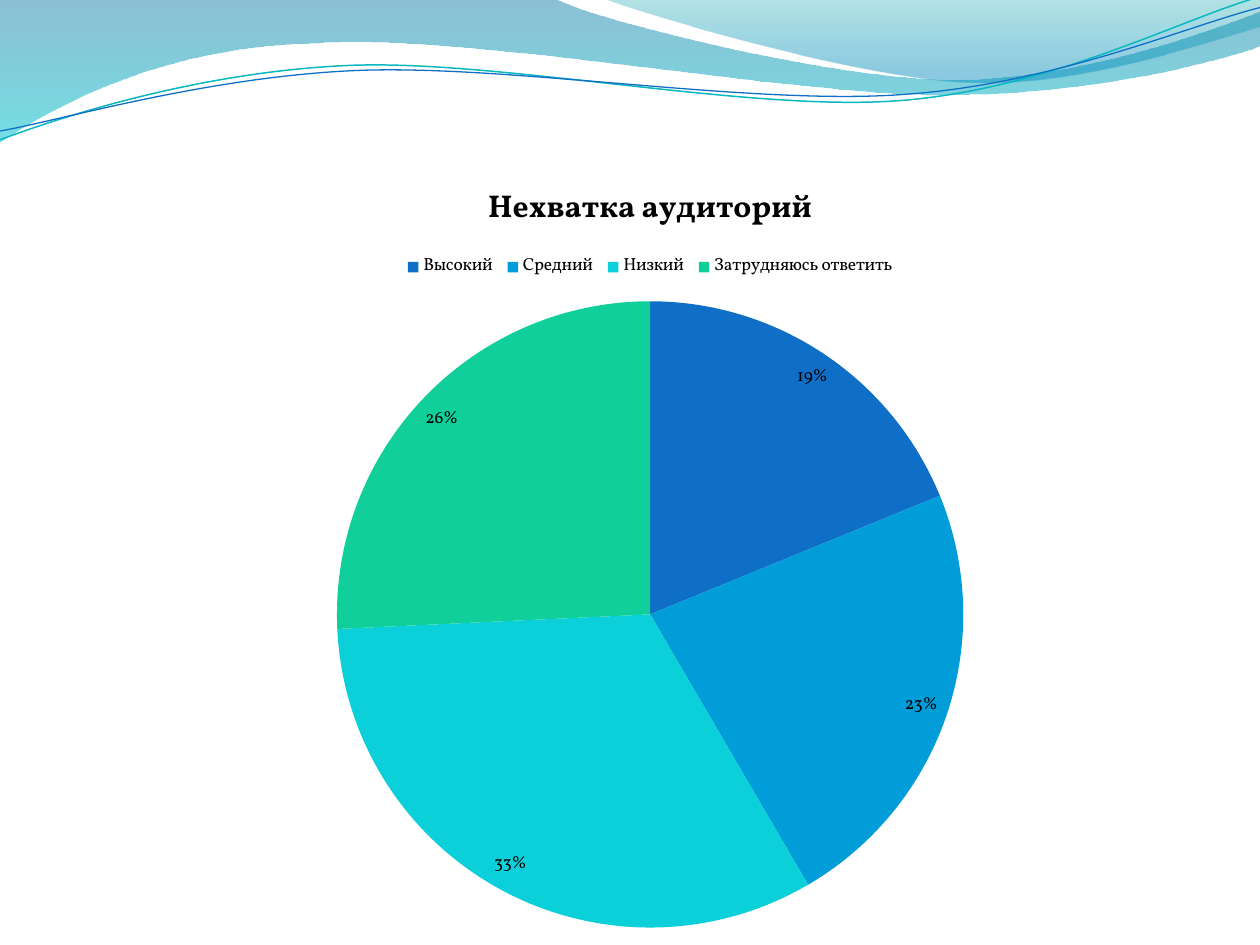
from lxml.etree import SubElement
from pptx import Presentation
from pptx.chart.data import CategoryChartData
from pptx.dml.color import RGBColor
from pptx.enum.chart import XL_CHART_TYPE, XL_LABEL_POSITION, XL_LEGEND_POSITION
from pptx.oxml.ns import qn
from pptx.util import Inches, Pt

FONT = "Vollkorn"
COLORS = {
    "text": "000000",
    "band_top": "0074A1", "band_bottom": "00C6CF",
    "crest_top": "00A1A9", "crest_bottom": "008BBF",
    "teal_line": "0AB8BF", "blue_line": "0F6FC6",
    "high": "0F6FC6", "medium": "009DD9", "low": "0BD0D9", "unsure": "10CF9B",
}
# The trailing spaces belong to the category names and widen the legend.
ANSWERS = [
    ("Высокий ", 19, "high"),
    ("Средний ", 23, "medium"),
    ("Низкий ", 33, "low"),
    ("Затрудняюсь ответить", 26, "unsure"),
]

# Outlines in inches from the header's corner: a pair is a straight step,
# six numbers are a Bézier step (two control points and an end).
BAND = [(0, 0), (4.4, -0.01), (4.76, 0.17, 6.64, 0.63, 7.58, 0.63),
        (8.53, 0.63, 9.58, 0.26, 10, 0.09), (10.01, 0.36),
        (9.83, 0.44, 8.7, 0.76, 7.46, 0.75), (6.22, 0.75, 3.82, 0.28, 2.57, 0.34),
        (1.29, 0.36, 0.46, 0.83, -0.01, 1.13), (0, 0)]
CREST = [(4.79, -0.01), (5.09, 0.11, 6.82, 0.62, 7.69, 0.65),
         (8.56, 0.69, 9.61, 0.32, 10, 0.21), (10, 0), (4.79, -0.01)]
TEAL_WAVE = [(0, 1.11), (0.48, 0.93, 1.58, 0.57, 2.77, 0.52),
             (3.95, 0.47, 5.93, 0.89, 7.13, 0.8), (8.33, 0.71, 9.38, 0.15, 9.98, -0.02)]
BLUE_WAVE = [(0, 1.04), (0.47, 0.96, 1.64, 0.61, 2.83, 0.56),
             (4.03, 0.51, 5.97, 0.84, 7.17, 0.75), (8.36, 0.67, 9.41, 0.21, 10, 0.06)]


def rgb(name):
    return RGBColor.from_string(COLORS[name])


def add_outline(s, left, top, steps, close):
    """Draw all points as a freeform, then join each Bézier step's three into a curve."""
    points = [(left + Inches(step[i]), top + Inches(step[i + 1]))
              for step in steps for i in range(0, len(step), 2)]
    builder = s.shapes.build_freeform(*points[0])
    builder.add_line_segments(points[1:], close=close)
    sp = builder.convert_to_shape()
    sp.shadow.inherit = False

    lines = iter(list(sp.element.iter(qn("a:lnTo"))))
    for step in steps[1:]:
        segment = next(lines)
        if len(step) == 6:
            curve = segment.makeelement(qn("a:cubicBezTo"))
            segment.addprevious(curve)
            for part in (segment, next(lines), next(lines)):
                curve.append(part[0])
                part.getparent().remove(part)
    return sp


def add_wave_area(s, left, top, steps, stops):
    """Fill an outline downwards with (position, colour, opacity %) stops."""
    sp = add_outline(s, left, top, steps, close=True)
    sp.line.fill.background()
    sp.fill.gradient()
    sp.fill.gradient_angle = 270
    for stop, (position, color, _) in zip(sp.fill.gradient_stops, stops):
        stop.position = position
        stop.color.rgb = rgb(color)
    for clr, (_, _, opacity) in zip(sp.element.iter(qn("a:srgbClr")), stops):
        SubElement(clr, qn("a:alpha"), val=str(opacity * 1000))


def add_wave_line(s, left, top, steps, color, width):
    sp = add_outline(s, left, top, steps, close=False)
    sp.fill.background()
    sp.line.color.rgb = rgb(color)
    sp.line.width = Pt(width)


def add_header(s, left, top):
    add_wave_area(s, left, top, BAND, [(0, "band_top", 45), (1, "band_bottom", 55)])
    add_wave_area(s, left, top, CREST, [(0, "crest_top", 30), (0.8, "crest_bottom", 45)])
    add_wave_line(s, left, top, TEAL_WAVE, "teal_line", 0.85)
    add_wave_line(s, left, top, BLUE_WAVE, "blue_line", 0.75)


def set_font(font, size, bold=False):
    font.name = FONT
    font.size = Pt(size)
    font.bold = bold
    font.color.rgb = rgb("text")


def add_answers_pie(s, left, top, width, height):
    data = CategoryChartData()
    data.categories = [label for label, _, _ in ANSWERS]
    data.add_series("Series 1", [value for _, value, _ in ANSWERS])
    chart = s.shapes.add_chart(XL_CHART_TYPE.PIE, left, top, width, height, data).chart
    set_font(chart.font, 10)

    chart.has_title = True
    p = chart.chart_title.text_frame.paragraphs[0]
    p.text = "Нехватка аудиторий"
    set_font(p.font, 18, bold=True)
    chart.chart_title.include_in_layout = False

    chart.has_legend = True
    chart.legend.position = XL_LEGEND_POSITION.TOP
    chart.legend.include_in_layout = False

    plot = chart.plots[0]
    plot.vary_by_categories = True
    for i, (_, _, color) in enumerate(ANSWERS):
        fill = plot.series[0].points[i].format.fill
        fill.solid()
        fill.fore_color.rgb = rgb(color)

    labels = plot.series[0].data_labels
    labels.show_percentage = True
    labels.show_value = False
    labels.number_format = "0%"
    labels.number_format_is_linked = False
    labels.position = XL_LABEL_POSITION.BEST_FIT
    set_font(labels.font, 10)


def main():
    prs = Presentation()
    prs.slide_width, prs.slide_height = Inches(10), Inches(7.5)
    s = prs.slides.add_slide(prs.slide_layouts[6])
    add_header(s, Inches(0), Inches(0))
    add_answers_pie(s, Inches(0.28), Inches(1.23), Inches(9.76), Inches(6.27))
    prs.save("out.pptx")


if __name__ == "__main__":
    main()
